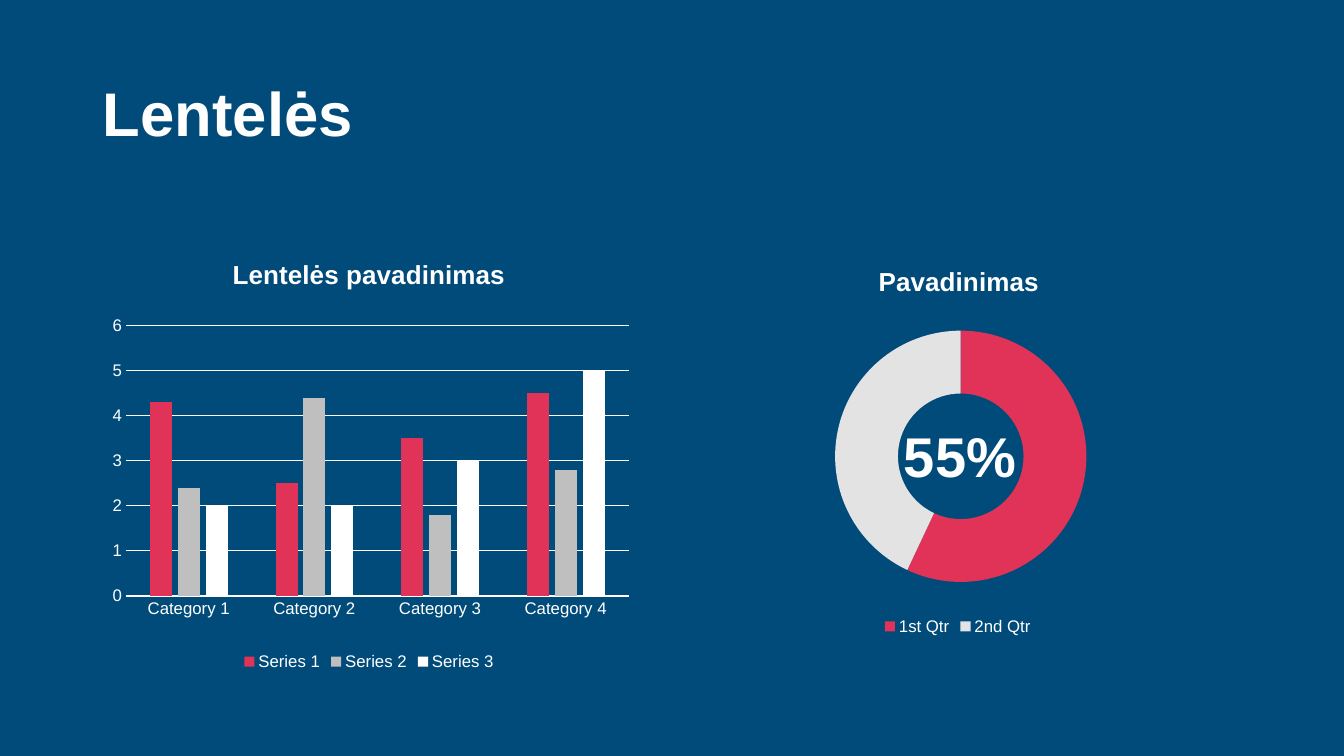
"""Build the slide with a column chart and a doughnut chart."""
from lxml.etree import SubElement
from pptx import Presentation
from pptx.chart.data import CategoryChartData
from pptx.dml.color import RGBColor
from pptx.enum.chart import XL_CHART_TYPE, XL_LEGEND_POSITION, XL_TICK_MARK
from pptx.enum.text import MSO_ANCHOR, MSO_AUTO_SIZE, PP_ALIGN
from pptx.oxml.ns import qn
from pptx.util import Cm, Pt

NAVY = RGBColor(0x00, 0x4B, 0x79)
RED = RGBColor(0xE0, 0x33, 0x57)
GREY = RGBColor(0xBF, 0xBF, 0xBF)
PALE = RGBColor(0xE2, 0xE3, 0xE2)
WHITE = RGBColor(0xFF, 0xFF, 0xFF)

TITLE = "Lentelės"
SHARE = "55%"
COLUMNS = {
    "type": XL_CHART_TYPE.COLUMN_CLUSTERED,
    "title": "Lentelės pavadinimas",
    "categories": ["Category 1", "Category 2", "Category 3", "Category 4"],
    "series": [
        ("Series 1", (4.3, 2.5, 3.5, 4.5)),
        ("Series 2", (2.4, 4.4, 1.8, 2.8)),
        ("Series 3", (2, 2, 3, 5)),
    ],
    "colors": [RED, GREY, WHITE],
    "left": 2.34,
    "layouts": {"plotArea": (0.06, 0.2, 0.91, 0.62)},
}
DOUGHNUT = {
    "type": XL_CHART_TYPE.DOUGHNUT,
    "title": "Pavadinimas",
    "categories": ["1st Qtr", "2nd Qtr"],
    "series": [("Series 1", (57, 43))],
    "colors": [RED, PALE],
    "left": 17.15,
    "layouts": {
        "plotArea": (0.28, 0.21, 0.455, 0.58),
        "title": (0.35, 0.05),
        "legend": (0.36, 0.86),
    },
}
CHART_TOP, CHART_W, CHART_H = 6, 13.92, 11
HOLE = 61


def set_font(font, size, bold=False):
    values = {"name": "Arial", "size": Pt(size), "bold": bold}
    for name, value in values.items():
        setattr(font, name, value)
    font.color.rgb = WHITE


def set_layout(parent, place):
    for old in parent.findall(qn("c:layout")):
        parent.remove(old)
    layout = parent.makeelement(qn("c:layout"))
    overlay = parent.find(qn("c:overlay"))
    parent.insert(0 if overlay is None else parent.index(overlay), layout)
    manual = SubElement(layout, qn("c:manualLayout"))
    values = [("xMode", "edge"), ("yMode", "edge"), *zip("xywh", place)]
    if len(place) == 4:
        values.insert(0, ("layoutTarget", "inner"))
    for tag, value in values:
        SubElement(manual, qn(f"c:{tag}")).set("val", str(value))


def add_chart(slide, spec):
    data = CategoryChartData()
    data.categories = spec["categories"]
    for name, values in spec["series"]:
        data.add_series(name, values)
    box = [Cm(v) for v in (spec["left"], CHART_TOP, CHART_W, CHART_H)]
    chart = slide.shapes.add_chart(spec["type"], *box, data).chart
    set_font(chart.font, 10)
    chart.has_title = True
    tf = chart.chart_title.text_frame
    tf.text = spec["title"]
    set_font(tf.paragraphs[0].runs[0].font, 18.6, True)
    chart.has_legend = True
    chart.legend.position = XL_LEGEND_POSITION.BOTTOM
    chart.legend.include_in_layout = False
    set_font(chart.legend.font, 12)
    for tag, place in spec["layouts"].items():
        set_layout(chart._chartSpace.xpath(f"c:chart//c:{tag}")[0], place)
    return chart


def color_parts(parts, colors):
    for part, color in zip(parts, colors):
        part.format.fill.solid()
        part.format.fill.fore_color.rgb = color
        part.format.line.fill.background()


def format_columns(chart):
    plot = chart.plots[0]
    for name, value in {"gap_width": 219, "overlap": -27, "vary_by_categories": False}.items():
        setattr(plot, name, value)
    color_parts(plot.series, COLUMNS["colors"])
    for axis in (chart.category_axis, chart.value_axis):
        axis.major_tick_mark = axis.minor_tick_mark = XL_TICK_MARK.NONE
        set_font(axis.tick_labels.font, 12)
    axis = chart.value_axis
    for name, value in {"minimum_scale": 0, "maximum_scale": 6, "major_unit": 1}.items():
        setattr(axis, name, value)
    axis.format.line.fill.background()
    lines = [(chart.category_axis.format.line, 0.75), (axis.major_gridlines.format.line, 0.5)]
    for line, width in lines:
        line.color.rgb = WHITE
        line.width = Pt(width)


def format_doughnut(chart):
    plot = chart.plots[0]
    plot.vary_by_categories = True
    points = plot.series[0].points
    color_parts([points[i] for i in range(len(DOUGHNUT["colors"]))], DOUGHNUT["colors"])
    chart._chartSpace.xpath(".//c:holeSize")[0].set("val", str(HOLE))


def fill_text(sp, text, size, **frame):
    tf = sp.text_frame
    tf.text = text
    for name, value in {"word_wrap": True, **frame}.items():
        setattr(tf, name, value)
    p = tf.paragraphs[0]
    p.alignment = PP_ALIGN.LEFT
    set_font(p.runs[0].font, size, True)
    return p


def main():
    prs = Presentation()
    prs.slide_width, prs.slide_height = Cm(33.87), Cm(19.05)
    slide = prs.slides.add_slide(prs.slide_layouts[5])
    slide.background.fill.solid()
    slide.background.fill.fore_color.rgb = NAVY

    title = slide.shapes.title
    place = {"left": 2.34, "top": 1.98, "width": 24.82, "height": 3.68}
    for name, value in place.items():
        setattr(title, name, Cm(value))
    p = fill_text(title, TITLE, 44, vertical_anchor=MSO_ANCHOR.TOP, auto_size=MSO_AUTO_SIZE.NONE)
    p.line_spacing = 0.9

    format_columns(add_chart(slide, COLUMNS))
    format_doughnut(add_chart(slide, DOUGHNUT))
    share = slide.shapes.add_textbox(Cm(22.53), Cm(10.49), Cm(3.38), Cm(1.96))
    fill_text(share, SHARE, 40, auto_size=MSO_AUTO_SIZE.SHAPE_TO_FIT_TEXT)
    prs.save("out.pptx")


if __name__ == "__main__":
    main()
